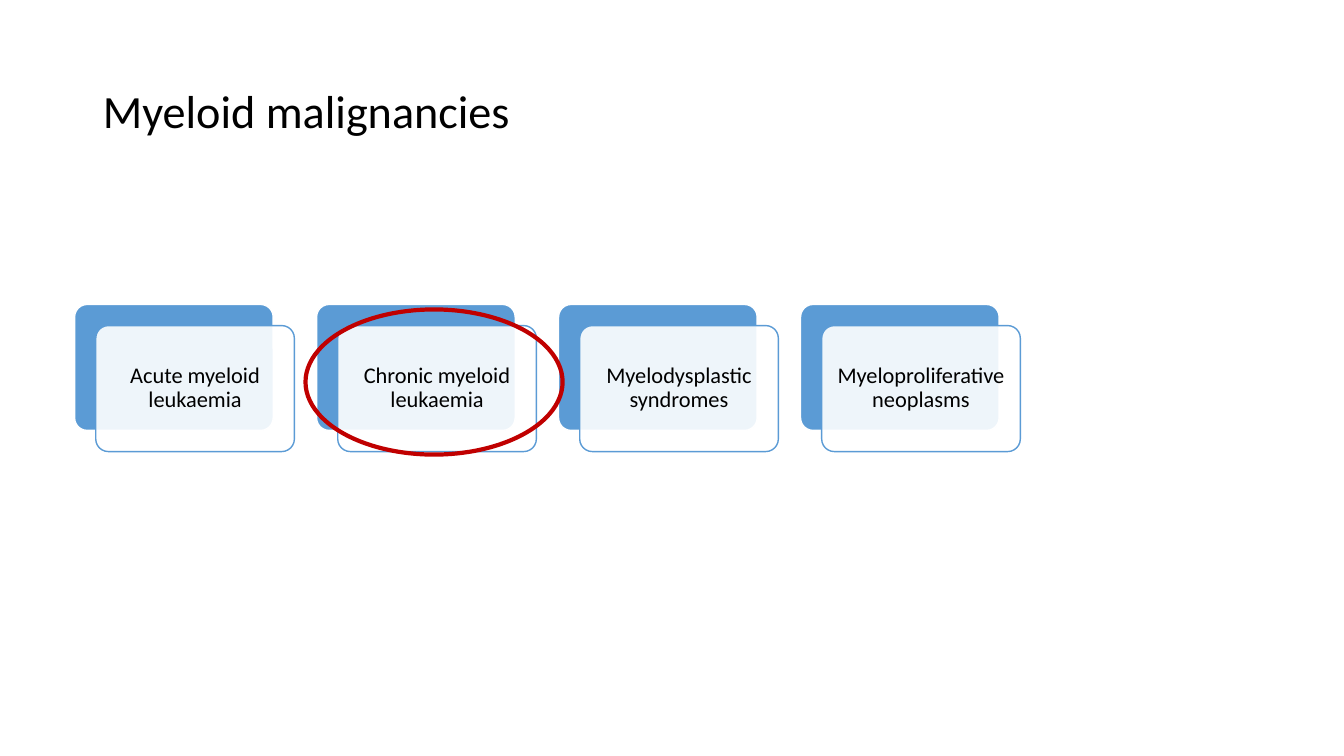
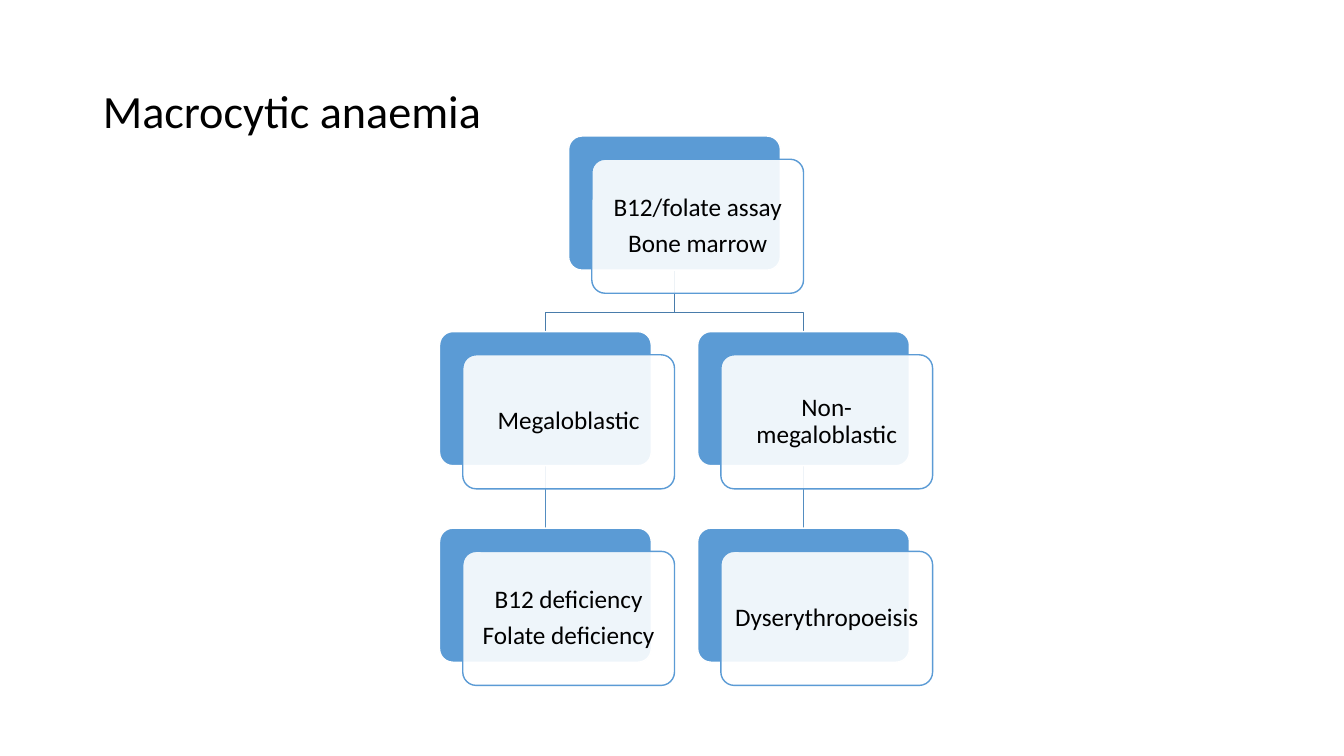
"""Build two slides of layered cards on blood disorders."""
from dataclasses import dataclass

from lxml import etree
from pptx import Presentation
from pptx import util as u
from pptx.dml import color
from pptx.enum import shapes, text
from pptx.oxml import ns


@dataclass(frozen=True)
class Theme:
    font: str = "Calibri"
    ink: str = "000000"
    paper: str = "FFFFFF"
    card: str = "5B9BD5"
    branch: str = "497CAB"
    stem: str = "538DC1"
    ring: str = "C00000"
    title_size: int = 33
    row_size: int = 16
    tree_size: int = 18
    thin: int = 1
    thick: int = 3
    leading: float = 0.9
    gap_share: float = 0.35
    corner: float = 0.1
    inset: float = 0.07
    front_alpha: int = 90


class Deck:
    def __init__(self, theme):
        self.theme = theme
        self.presentation = Presentation()
        self.presentation.slide_width = u.Inches(13.33)
        self.presentation.slide_height = u.Inches(7.5)
        self.slide = None

    def add_slide(self, title):
        layout = self.presentation.slide_layouts[5]
        self.slide = self.presentation.slides.add_slide(layout)
        shape = self.slide.shapes.title
        shape.left, shape.top = u.Inches(0.92), u.Inches(0.4)
        shape.width, shape.height = u.Inches(11.5), u.Inches(1.45)
        self.set_lines(shape, [title], self.theme.title_size, text.PP_ALIGN.LEFT)

    def set_lines(self, shape, lines, size, alignment, space_after=0):
        frame = shape.text_frame
        frame.text = "\n".join(lines)
        frame.word_wrap = True
        frame.auto_size = text.MSO_AUTO_SIZE.NONE
        frame.vertical_anchor = text.MSO_ANCHOR.MIDDLE
        for paragraph in frame.paragraphs:
            paragraph.alignment = alignment
            paragraph.line_spacing = self.theme.leading
            paragraph.space_before = u.Pt(0)
            paragraph.space_after = u.Pt(space_after)
            for run in paragraph.runs:
                run.font.name = self.theme.font
                run.font.size = u.Pt(size)
                run.font.color.rgb = color.RGBColor.from_string(self.theme.ink)

    def outline(self, shape, line_color, width):
        shape.line.color.rgb = color.RGBColor.from_string(line_color)
        shape.line.width = u.Pt(width)

    def panel(self, kind, left, top, width, height, fill, line_color, line_width):
        shape = self.slide.shapes.add_shape(
            kind, u.Inches(left), u.Inches(top), u.Inches(width), u.Inches(height))
        shape.shadow.inherit = False
        if fill:
            shape.fill.solid()
            shape.fill.fore_color.rgb = color.RGBColor.from_string(fill)
        else:
            shape.fill.background()
        self.outline(shape, line_color, line_width)
        return shape

    def card(self, left, top, width, height, offset, lines, size):
        theme = self.theme
        kind = shapes.MSO_SHAPE.ROUNDED_RECTANGLE
        back = self.panel(kind, left, top, width, height,
                          theme.card, theme.paper, theme.thin)
        front = self.panel(kind, left + offset, top + offset, width, height,
                           theme.paper, theme.card, theme.thin)
        for shape in (back, front):
            shape.adjustments[0] = theme.corner
        fill_color = front._element.spPr.find(
            f"{ns.qn('a:solidFill')}/{ns.qn('a:srgbClr')}")
        etree.SubElement(fill_color, ns.qn("a:alpha"),
                         val=str(theme.front_alpha * 1000))
        frame = front.text_frame
        frame.margin_left = frame.margin_right = u.Inches(theme.inset)
        frame.margin_top = frame.margin_bottom = u.Inches(theme.inset)
        self.set_lines(front, lines, size, text.PP_ALIGN.CENTER,
                       size * theme.gap_share)

    def ring(self, left, top, width, height):
        self.panel(shapes.MSO_SHAPE.OVAL, left, top, width, height,
                   None, self.theme.ring, self.theme.thick)

    def stem(self, x, top, bottom):
        connector = self.slide.shapes.add_connector(
            shapes.MSO_CONNECTOR.STRAIGHT,
            u.Inches(x), u.Inches(top), u.Inches(x), u.Inches(bottom))
        etree.SubElement(connector._element.spPr, ns.qn("a:effectLst"))
        self.outline(connector, self.theme.stem, self.theme.thin)

    def branch(self, points):
        start, *rest = [(u.Inches(x), u.Inches(y)) for x, y in points]
        builder = self.slide.shapes.build_freeform(*start)
        builder.add_line_segments(rest, close=False)
        shape = builder.convert_to_shape()
        shape.shadow.inherit = False
        shape.fill.background()
        self.outline(shape, self.theme.branch, self.theme.thin)


def add_malignancies(deck):
    deck.add_slide("Myeloid malignancies")
    names = ["Acute myeloid leukaemia", "Chronic myeloid leukaemia",
             "Myelodysplastic syndromes", "Myeloproliferative neoplasms"]
    left, pitch = 0.74, 2.4
    for column, name in enumerate(names):
        deck.card(left + column * pitch, 3.02, 1.97, 1.25, 0.21,
                  [name], deck.theme.row_size)
    deck.ring(3.03, 3.07, 2.55, 1.44)


def add_anaemia(deck):
    deck.add_slide("Macrocytic anaemia")
    width, height, offset = 2.1, 1.33, 0.23
    root_left, spread = 5.64, 1.28
    tops = [1.35, 3.29, 5.24]
    root_x = root_left + width / 2
    root_bottom, bend = tops[0] + height, 3.1
    columns = [
        (-spread, [["Megaloblastic"], ["B12 deficiency", "Folate deficiency"]]),
        (spread, [["Non-megaloblastic"], ["Dyserythropoeisis"]]),
    ]
    for shift, _ in columns:
        x = root_x + shift
        deck.stem(x, tops[1] + height, tops[2])
        deck.branch([(root_x, root_bottom), (root_x, bend), (x, bend), (x, tops[1])])
    cards = [(0, tops[0], ["B12/folate assay", "Bone marrow"])]
    cards += [(shift, top, lines) for shift, levels in columns
              for top, lines in zip(tops[1:], levels)]
    for shift, top, lines in cards:
        deck.card(root_left + shift, top, width, height, offset,
                  lines, deck.theme.tree_size)


def main():
    deck = Deck(Theme())
    add_malignancies(deck)
    add_anaemia(deck)
    deck.presentation.save("out.pptx")


if __name__ == "__main__":
    main()
